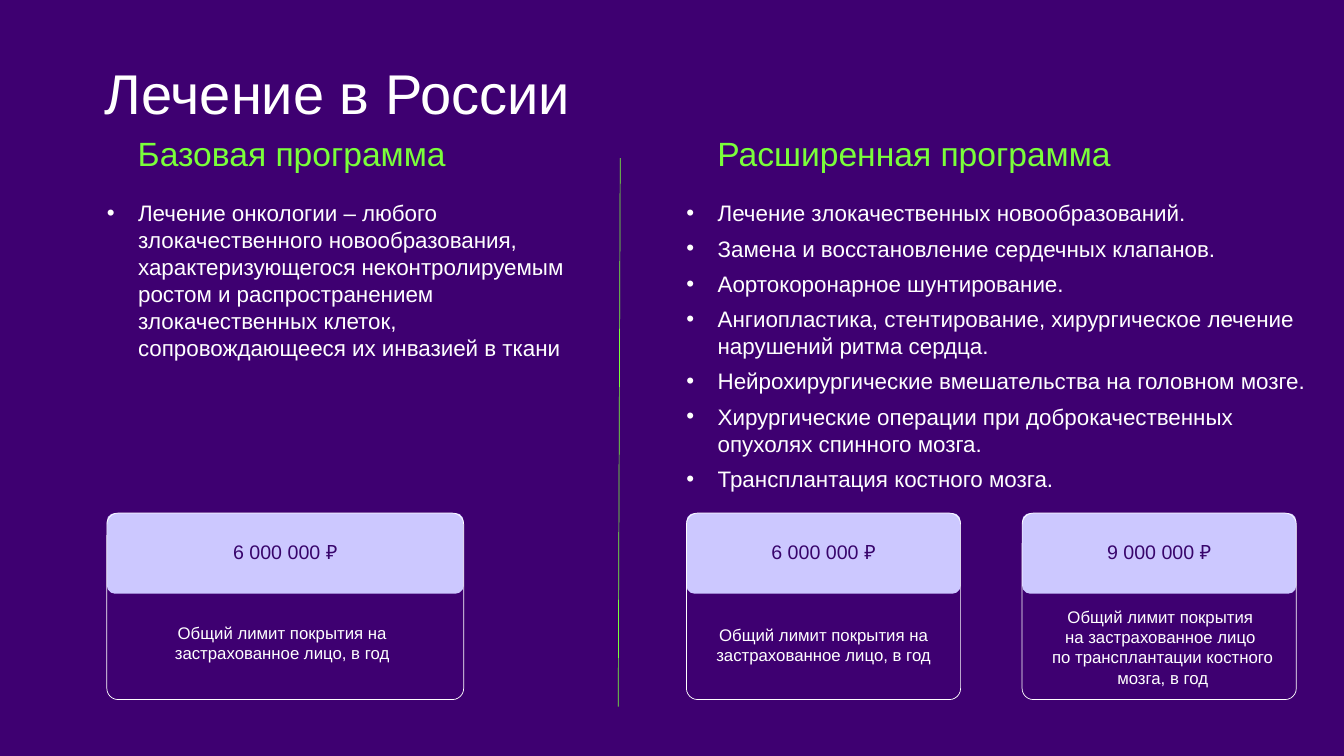
from lxml import etree
from pptx import Presentation
from pptx.dml.color import RGBColor
from pptx.enum.shapes import MSO_CONNECTOR, MSO_SHAPE
from pptx.enum.text import MSO_AUTO_SIZE, PP_ALIGN
from pptx.oxml.ns import qn
from pptx.util import Inches, Pt

LEFT, CENTER = PP_ALIGN.LEFT, PP_ALIGN.CENTER
ROUNDED, STRAIGHT = MSO_SHAPE.ROUNDED_RECTANGLE, MSO_CONNECTOR.STRAIGHT
GROW = MSO_AUTO_SIZE.SHAPE_TO_FIT_TEXT
WIDTH, HEIGHT = Inches(13.33), Inches(7.5)
COLUMNS, ROWS = 40, 30
COLORS = {"background": "3E0071", "panel": "CCC8FF", "accent": "7AFF3A",
          "text": "FFFFFF", "amount": "38056C"}
FORMATS = {
    "title": {"size": 40, "color": "text", "align": LEFT, "line_spacing": Pt(44)},
    "heading": {"size": 24, "color": "accent", "align": LEFT, "line_spacing": Pt(27)},
    "bullet": {"size": 16, "color": "text", "align": LEFT, "space_after": Pt(6)},
    "amount": {"size": 14, "color": "amount", "align": CENTER},
    "limit": {"size": 12, "color": "text", "align": CENTER},
}
YEAR_LIMIT = "Общий лимит покрытия на застрахованное лицо, в год"
TRANSPLANT_LIMIT = ("Общий лимит покрытия \nна застрахованное лицо \n"
                    "по трансплантации костного мозга, в год")
PROGRAMS = [
    {"box": (3.18, 5.36, 14.88, 22.4), "heading": "Базовая программа", "heading_width": 9.4,
     "bullets": ["Лечение онкологии – любого злокачественного новообразования, "
                 "характеризующегося неконтролируемым ростом и распространением "
                 "злокачественных клеток, сопровождающееся их инвазией в ткани"],
     "list_height": 10.72, "card_width": 10.62,
     "cards": [{"amount": "6 000 000 ₽", "amount_inset": 0.95, "limit": YEAR_LIMIT,
                "limit_box": (0.75, 4.36, 8.94, 1.6)}]},
    {"box": (20.43, 5.36, 19.14, 22.4), "heading": "Расширенная программа", "heading_width": 12.42,
     "bullets": ["Лечение злокачественных новообразований.",
                 "Замена и восстановление сердечных клапанов.",
                 "Аортокоронарное шунтирование.",
                 "Ангиопластика, стентирование, хирургическое лечение нарушений ритма сердца.",
                 "Нейрохирургические вмешательства на головном мозге.",
                 "Хирургические операции при доброкачественных опухолях спинного мозга.",
                 "Трансплантация костного мозга."],
     "list_height": 11.72, "card_width": 8.16,
     "cards": [{"amount": "6 000 000 ₽", "amount_inset": 0.75, "limit": YEAR_LIMIT,
                "limit_box": (0.65, 4.44, 6.87, 1.68)},
               {"amount": "9 000 000 ₽", "amount_inset": 0.12, "limit": TRANSPLANT_LIMIT,
                "limit_box": (0.3, 3.72, 7.77, 4.04)}]},
]


def color(name):
    """Return a palette colour."""
    return RGBColor.from_string(COLORS[name])


def place(left, top, width, height):
    """Convert a box in grid columns and rows to slide lengths."""
    return (int(left * WIDTH / COLUMNS), int(top * HEIGHT / ROWS),
            int(width * WIDTH / COLUMNS), int(height * HEIGHT / ROWS))


def add_bullet(paragraph):
    """Give a paragraph a round bullet with a hanging indent."""
    properties = paragraph._p.get_or_add_pPr()
    properties.set("marL", str(Inches(0.31)))
    properties.set("indent", str(-Inches(0.31)))
    etree.SubElement(properties, qn("a:buFont")).set("typeface", "Arial")
    etree.SubElement(properties, qn("a:buChar")).set("char", "•")


def add_text(slide, box, lines, style):
    """Add a text box with one paragraph for each line."""
    values = dict(FORMATS[style])
    size, text_color = Pt(values.pop("size")), color(values.pop("color"))
    values["alignment"] = values.pop("align")
    frame = slide.shapes.add_textbox(*place(*box)).text_frame
    settings = {"word_wrap": True, "auto_size": GROW, "margin_left": 0,
                "margin_top": 0, "margin_right": 0, "margin_bottom": 0}
    for name, value in settings.items():
        setattr(frame, name, value)
    for index, line in enumerate(lines):
        paragraph = frame.add_paragraph() if index else frame.paragraphs[0]
        paragraph.text = line
        if style == "bullet":
            add_bullet(paragraph)
        for name, value in values.items():
            setattr(paragraph, name, value)
        for run in paragraph.runs:
            run.font.name, run.font.size = "Arial", size
            run.font.color.rgb = text_color


def add_panel(slide, box, corner, fill=None, line=None):
    """Add a rounded rectangle with a fill or an outline."""
    shape = slide.shapes.add_shape(ROUNDED, *place(*box))
    shape.shadow.inherit = False
    shape.adjustments[0] = corner
    if fill:
        shape.fill.solid()
        shape.fill.fore_color.rgb = color(fill)
    else:
        shape.fill.background()
    if line:
        shape.line.color.rgb = color(line)
        shape.line.width = Pt(0.5)
    else:
        shape.line.fill.background()


def add_card(slide, box, card):
    """Add a coverage card: amount on a panel, limit below it."""
    left, top, width, height = box
    inset = card["amount_inset"]
    limit_left, limit_top, limit_width, limit_height = card["limit_box"]
    add_panel(slide, (left, top, width, 3.2), 0.1, fill="panel")
    add_text(slide, (left + inset, top + 1.08, width - 2 * inset, 0.96),
             [card["amount"]], "amount")
    add_text(slide, (left + limit_left, top + limit_top, limit_width, limit_height),
             [card["limit"]], "limit")
    add_panel(slide, box, 0.06, line="text")


def add_program(slide, program):
    """Add a programme: heading, bullet list and a row of cards."""
    left, top, width, height = program["box"]
    card_width, card_height, card_step = program["card_width"], 7.4, 9.99
    add_text(slide, (left + 0.92, top, program["heading_width"], 1.52),
             [program["heading"]], "heading")
    add_text(slide, (left, top + 2.56, width, program["list_height"]),
             program["bullets"], "bullet")
    for index, card in enumerate(program["cards"]):
        add_card(slide, (left + index * card_step, top + height - card_height,
                         card_width, card_height), card)


def add_divider(slide, box):
    """Add the slightly slanted line between the programmes."""
    left, top, width, height = place(*box)
    line = slide.shapes.add_connector(STRAIGHT, left + width, top, left, top + height)
    line.line.color.rgb = color("accent")
    line.line.width = Pt(0.5)
    etree.SubElement(line._element.spPr, qn("a:effectLst"))


def main():
    """Build and save the presentation."""
    presentation = Presentation()
    presentation.slide_width, presentation.slide_height = WIDTH, HEIGHT
    slide = presentation.slides.add_slide(presentation.slide_layouts[6])
    slide.background.fill.solid()
    slide.background.fill.fore_color.rgb = color("background")
    add_text(slide, (3.12, 2.56, 15.27, 2.48), ["Лечение в России"], "title")
    for program in PROGRAMS:
        add_program(slide, program)
    add_divider(slide, (18.4, 6.28, 0.06, 21.76))
    presentation.save("out.pptx")


if __name__ == "__main__":
    main()
